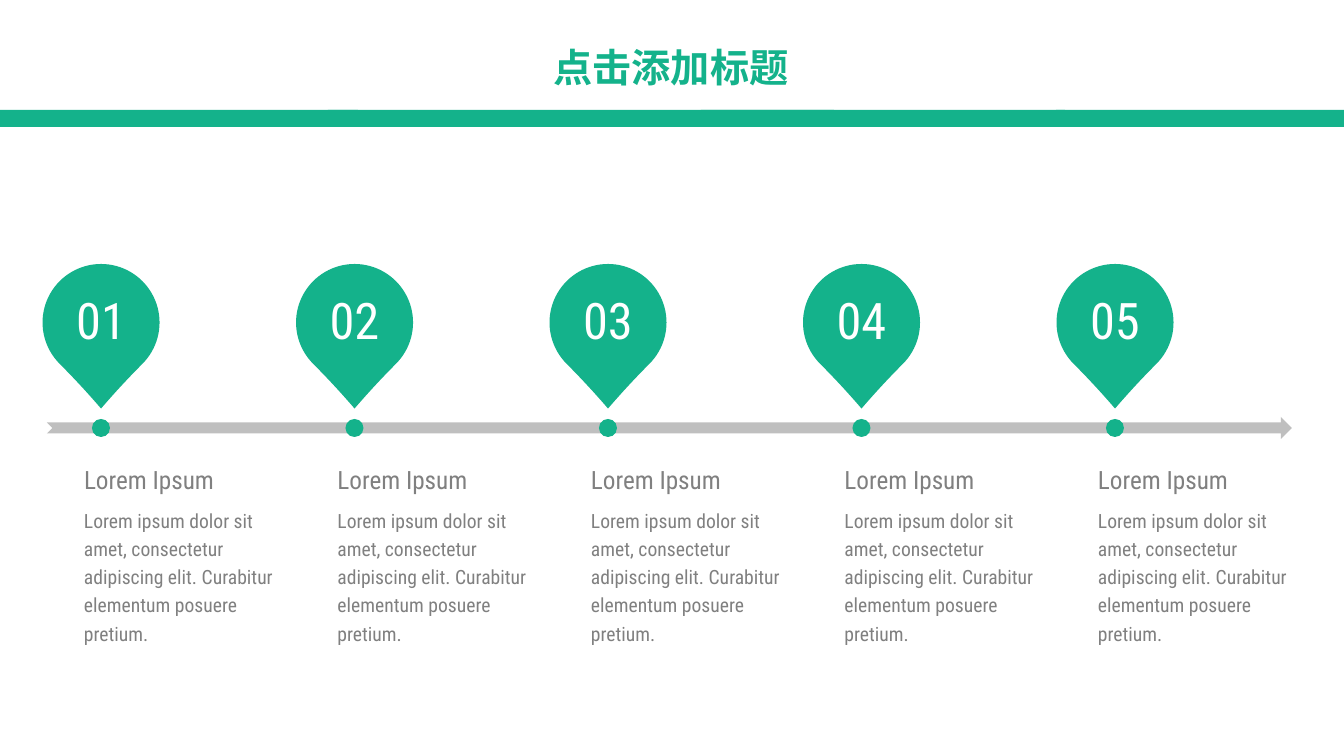
"""Build a five-step timeline slide with numbered pins."""
from lxml.etree import SubElement
from pptx import Presentation
from pptx.dml.color import RGBColor
from pptx.enum.shapes import MSO_SHAPE
from pptx.enum.text import MSO_ANCHOR, PP_ALIGN
from pptx.oxml.ns import qn
from pptx.util import Emu, Pt

GREEN = RGBColor(0x14, 0xB2, 0x8B)
SILVER = RGBColor(0xBF, 0xBF, 0xBF)
GREY = RGBColor(0x80, 0x80, 0x80)
WHITE = RGBColor(0xFF, 0xFF, 0xFF)
LATIN = "Roboto Condensed"
HAN = "Noto Sans CJK SC"
BANDS = [(0, 358), (328, 506), (701, 364), (1056, 288)]
STEPS = 5
HEAD = "Lorem Ipsum"
BODY = ("Lorem ipsum dolor sit amet, consectetur adipiscing elit. "
        "Curabitur elementum posuere pretium.")


def px(*sizes):
    return [Emu(round(size * 914400 / 100.8)) for size in sizes]


def write(shape, text, size, color, font=LATIN, bold=False,
          align=PP_ALIGN.LEFT, anchor=MSO_ANCHOR.TOP, space=1.0, inset=(10, 5)):
    frame = shape.text_frame
    frame.word_wrap = True
    frame.vertical_anchor = anchor
    side, end = px(*inset)
    frame.margin_left = frame.margin_right = side
    frame.margin_top = frame.margin_bottom = end
    para = frame.paragraphs[0]
    para.alignment = align
    para.line_spacing = space
    run = para.add_run()
    run.text = text
    run.font.size = Pt(size)
    run.font.bold = bold
    run.font.name = font
    run.font.color.rgb = color
    SubElement(run.font._element, qn("a:ea"), typeface=font)


def label(slide, box, text, size, color, **style):
    write(slide.shapes.add_textbox(*px(*box)), text, size, color, **style)


def solid(slide, kind, box, color):
    shape = slide.shapes.add_shape(kind, *px(*box))
    shape.shadow.inherit = False
    shape.fill.solid()
    shape.fill.fore_color.rgb = color
    shape.line.fill.background()
    return shape


def pin(slide, mid, number):
    drop = solid(slide, MSO_SHAPE.TEAR, (mid - 58.5, 264, 117, 117), GREEN)
    drop.adjustments[0] = 1.04
    drop.rotation = 135
    label(slide, (mid - 48, 276, 96, 86), f"{number:02}", 36, WHITE,
          align=PP_ALIGN.CENTER, anchor=MSO_ANCHOR.MIDDLE, inset=(8, 0))
    solid(slide, MSO_SHAPE.OVAL, (mid - 9, 419, 18, 18), GREEN)


def notes(slide, left):
    label(slide, (left, 459, 201, 40), HEAD, 18, GREY)
    label(slide, (left, 499, 219, 160), BODY, 14, GREY, space=1.2)


def main():
    deck = Presentation()
    deck.slide_width, deck.slide_height = px(1344, 756)
    slide = deck.slides.add_slide(deck.slide_layouts[5])
    for left, width in BANDS:
        solid(slide, MSO_SHAPE.RECTANGLE, (left, 110, width, 17), GREEN)
    title = slide.shapes.title
    title.left, title.top, title.width, title.height = px(280, 38, 782, 88)
    write(title, "点击添加标题", 28, GREEN, font=HAN, bold=True,
          align=PP_ALIGN.CENTER)
    solid(slide, MSO_SHAPE.NOTCHED_RIGHT_ARROW, (47, 417, 1245, 22), SILVER)
    for step in range(STEPS):
        mid = 101 + step * 253.5
        pin(slide, mid, step + 1)
        notes(slide, mid - 27)
    deck.save("out.pptx")


if __name__ == "__main__":
    main()
